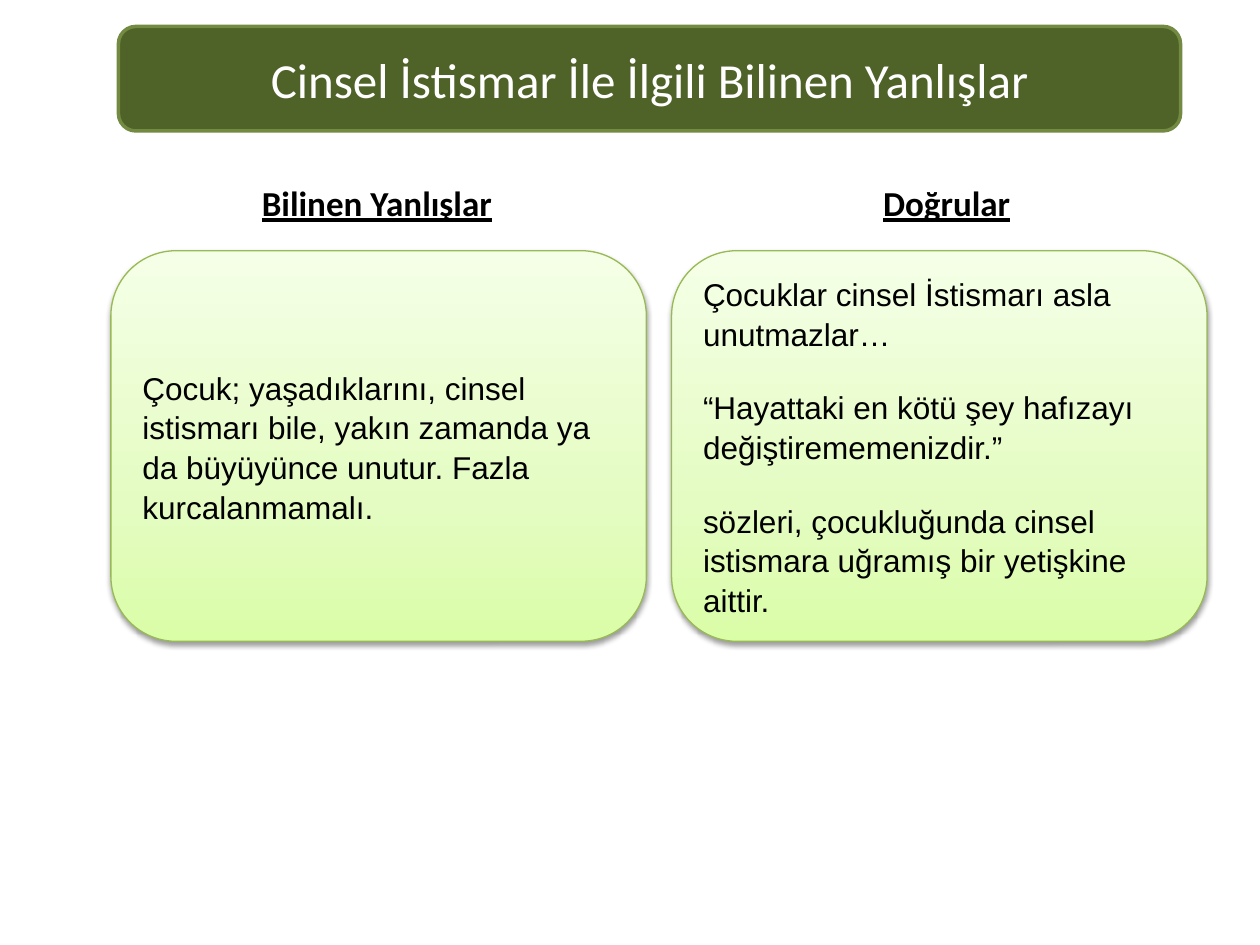
import copy
from dataclasses import dataclass

import pptx
import pptx.dml.color
import pptx.enum.shapes
import pptx.enum.text
import pptx.oxml
import pptx.oxml.ns
import pptx.util

Inches = pptx.util.Inches
Pt = pptx.util.Pt
Shape = pptx.enum.shapes.MSO_SHAPE
Anchor = pptx.enum.text.MSO_ANCHOR
Align = pptx.enum.text.PP_ALIGN


@dataclass(frozen=True)
class Theme:
    dark: str = "4F6228"
    edge: str = "738A42"
    rim: str = "98B955"
    fade: tuple = ((0, "DAFDA7"), (0.35, "E4FCC2"), (1, "F5FFE7"))
    white: str = "FFFFFF"
    black: str = "000000"
    head: str = "Calibri"
    body: str = "Arial"
    title: int = 28
    label: int = 20
    text: int = 18


THEME = Theme()
SHADE = (
    f'<a:effectLst {pptx.oxml.ns.nsdecls("a")}>'
    '<a:outerShdw blurRad="40000" dist="20000" dir="5400000" rotWithShape="0">'
    f'<a:srgbClr val="{THEME.black}"><a:alpha val="38000"/></a:srgbClr>'
    '</a:outerShdw></a:effectLst>'
)


def rgb(code):
    return pptx.dml.color.RGBColor.from_string(code)


def style(para, face, size, color):
    para.font.name = face
    para.font.size = Pt(size)
    para.font.color.rgb = rgb(color)


def add_round(slide, box, line, width):
    shape = slide.shapes.add_shape(Shape.ROUNDED_RECTANGLE, *map(Inches, box))
    shape.shadow.inherit = False
    shape.line.color.rgb = rgb(line)
    shape.line.width = Pt(width)
    shape.text_frame.word_wrap = True
    shape.text_frame.vertical_anchor = Anchor.MIDDLE
    return shape


def add_title(slide, box, text):
    shape = add_round(slide, box, THEME.edge, 2)
    shape.fill.solid()
    shape.fill.fore_color.rgb = rgb(THEME.dark)
    para = shape.text_frame.paragraphs[0]
    para.text = text
    para.alignment = Align.CENTER
    style(para, THEME.head, THEME.title, THEME.white)


def add_fade(shape):
    """Fill the shape with the theme's fade, running from bottom to top."""
    shape.fill.gradient()
    shape.fill.gradient_angle = 90
    stops = shape.element.spPr.find(".//" + pptx.oxml.ns.qn("a:gsLst"))
    stops.append(copy.deepcopy(stops[0]))
    for stop, (place, color) in zip(shape.fill.gradient_stops, THEME.fade):
        stop.position = place
        stop.color.rgb = rgb(color)


def add_shade(shape):
    props = shape.element.spPr
    plain = props.find(pptx.oxml.ns.qn("a:effectLst"))
    props.replace(plain, pptx.oxml.parse_xml(SHADE))


def add_card(slide, box, lines):
    shape = add_round(slide, box, THEME.rim, 0.75)
    add_fade(shape)
    add_shade(shape)
    frame = shape.text_frame
    for i, line in enumerate(lines):
        para = frame.add_paragraph() if i else frame.paragraphs[0]
        para.text = line
        para.alignment = Align.LEFT
        para.space_before = Pt(5.2)
        para.space_after = Pt(14.2)
        para.line_spacing = 1.05
        style(para, THEME.body, THEME.text, THEME.black)


def add_label(slide, box, text):
    frame = slide.shapes.add_textbox(*map(Inches, box)).text_frame
    frame.word_wrap = False
    frame.auto_size = pptx.enum.text.MSO_AUTO_SIZE.SHAPE_TO_FIT_TEXT
    para = frame.paragraphs[0]
    para.text = text
    style(para, THEME.head, THEME.label, THEME.black)
    para.font.bold = True
    para.font.underline = True


def add_column(slide, box, label, inset, span, lines):
    """Place a label above a card; inset and span set the label's place."""
    left, top, width, height = box
    drop = 0.6
    add_card(slide, (left, top + drop, width, height - drop), lines)
    add_label(slide, (left + inset, top, span, 0.44), label)


def main():
    deck = pptx.Presentation()
    deck.slide_width = Inches(10)
    deck.slide_height = Inches(7.5)
    slide = deck.slides.add_slide(deck.slide_layouts[6])
    add_title(slide, (0.94, 0.21, 8.43, 0.83),
              "Cinsel İstismar İle İlgili Bilinen Yanlışlar")
    columns = (
        ("Bilinen Yanlışlar", 1.1, 2.04, (
            "Çocuk; yaşadıklarını, cinsel istismarı bile, yakın zamanda ya da "
            "büyüyünce unutur. Fazla kurcalanmamalı.",
        )),
        ("Doğrular", 1.58, 1.22, (
            "Çocuklar cinsel İstismarı asla unutmazlar…",
            "“Hayattaki en kötü şey hafızayı değiştirememenizdir.”",
            "sözleri, çocukluğunda cinsel istismara uğramış bir yetişkine "
            "aittir.",
        )),
    )
    width, gap = 4.25, 0.2
    for i, column in enumerate(columns):
        left = 0.88 + i * (width + gap)
        add_column(slide, (left, 1.39, width, 3.7), *column)
    deck.save("out.pptx")


if __name__ == "__main__":
    main()
